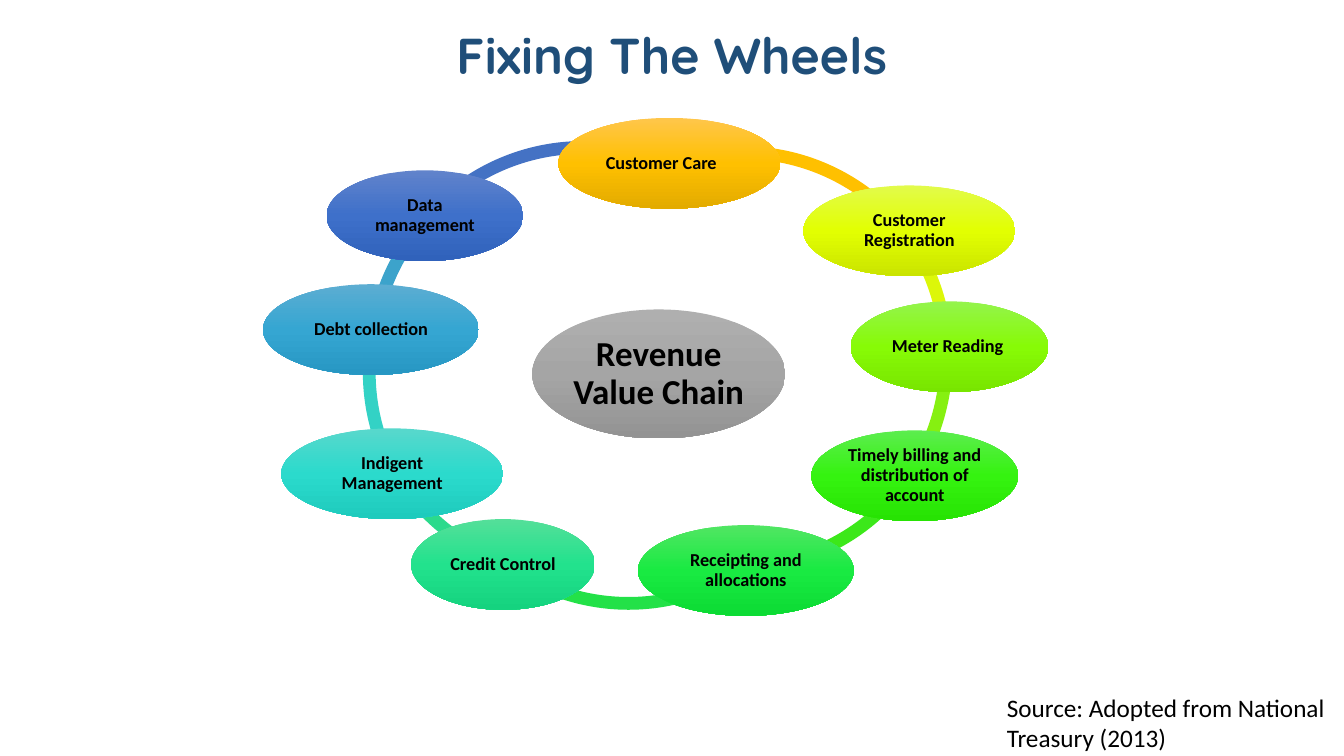
from copy import deepcopy
from dataclasses import dataclass

from pptx import Presentation
from pptx.dml.color import RGBColor
from pptx.enum.shapes import MSO_SHAPE
from pptx.enum.text import MSO_ANCHOR, PP_ALIGN
from pptx.oxml.ns import qn
from pptx.util import Inches, Pt

ELLIPSE = MSO_SHAPE.OVAL
BLOCK_ARC = MSO_SHAPE.BLOCK_ARC
CENTER = PP_ALIGN.CENTER
LEFT = PP_ALIGN.LEFT
MIDDLE = MSO_ANCHOR.MIDDLE
TOP = MSO_ANCHOR.TOP

COLUMNS, ROWS = 160, 90
ARC_SIZE = 50.76
ARC_THICKNESS = 0.03
STEP_HEIGHT = 10.8
DOWNWARD = 270

deck = Presentation()
deck.slide_width = Inches(13.33)
deck.slide_height = Inches(7.5)
page = deck.slides.add_slide(deck.slide_layouts[6])


@dataclass
class Arc:
    column: float
    row: float
    start: float
    end: float
    color: str


@dataclass
class Bubble:
    text: str
    column: float
    row: float
    width: float
    colors: tuple[str, str, str]
    height: float = STEP_HEIGHT
    size: int = 13
    inset: float = 0.02
    right_inset: float = 0.02


ARCS = [
    Arc(44.04, 16.8, 132.67, 176.61, "4472C4"),
    Arc(43.56, 17.4, 112.76, 133.73, "3CA3CB"),
    Arc(43.2, 18.96, 90.65, 114.93, "33D2C5"),
    Arc(42.96, 18.36, 65.86, 89.74, "2BDA8C"),
    Arc(49.44, 21.84, 33.55, 76.03, "23E148"),
    Arc(62.52, 17.52, 19.95, 52.86, "3CE81A"),
    Arc(62.64, 17.4, 213.96, 20.26, "86F011"),
    Arc(62.64, 16.92, 194.18, 214.51, "DCF709"),
    Arc(63, 17.4, 149.76, 193.36, "FFC000"),
]

BUBBLES = [
    Bubble("Revenue Value Chain", 63.36, 36.84, 30.12, ("AFAFAF", "A5A5A5", "939393"),
           height=15.36, size=25, inset=0.03, right_inset=0.03),
    Bubble("Customer Care", 66.48, 14.04, 26.4, ("FFC64B", "FFC000", "E3AB00"),
           right_inset=0.18),
    Bubble("Customer Registration", 95.64, 22.08, 25.2, ("E2FB4B", "E2FF01", "CAE400")),
    Bubble("Meter Reading", 101.28, 35.88, 23.52, ("94F44C", "87FB06", "78E500"),
           right_inset=0.06),
    Bubble("Timely billing and distribution of account", 96.6, 51.24, 24.6,
           ("5CED4E", "35F310", "27E303")),
    Bubble("Receipting and allocations", 75.96, 62.52, 25.68, ("51E663", "19EA42", "0CDB34")),
    Bubble("Credit Control", 48.96, 61.8, 21.84, ("54DF99", "22E28D", "15D37F")),
    Bubble("Indigent Management", 33.48, 51, 26.4, ("58D8CC", "2BDACC", "1ECBBD")),
    Bubble("Debt collection", 31.32, 33.84, 25.68, ("5CADD2", "35A6D2", "2797C3")),
    Bubble("Data management", 38.88, 20.28, 23.4, ("6183CB", "3E70CA", "3062BB")),
]


def rgb(color: str) -> RGBColor:
    return RGBColor.from_string(color)


def area(column: float, row: float, width: float, height: float) -> tuple[int, int, int, int]:
    return (
        round(deck.slide_width * column / COLUMNS),
        round(deck.slide_height * row / ROWS),
        round(deck.slide_width * width / COLUMNS),
        round(deck.slide_height * height / ROWS),
    )


def write(box, text: str, *, size: int, font: str = "Calibri", color: str = "000000",
          bold: bool = False, align=CENTER, anchor=MIDDLE, spacing: float = 0.9) -> None:
    frame = box.text_frame
    frame.word_wrap = True
    frame.vertical_anchor = anchor
    para = frame.paragraphs[0]
    para.alignment = align
    para.line_spacing = spacing
    span = para.add_run()
    span.text = text
    span.font.name = font
    span.font.size = Pt(size)
    span.font.bold = bold
    span.font.color.rgb = rgb(color)


def add_plain_shape(kind, column: float, row: float, width: float, height: float):
    shape = page.shapes.add_shape(kind, *area(column, row, width, height))
    shape.shadow.inherit = False
    shape.line.fill.background()
    return shape


def draw_arc(arc: Arc) -> None:
    shape = add_plain_shape(BLOCK_ARC, arc.column, arc.row, ARC_SIZE, ARC_SIZE)
    shape.adjustments[0] = arc.start
    shape.adjustments[1] = arc.end
    shape.adjustments[2] = ARC_THICKNESS
    shape.fill.solid()
    shape.fill.fore_color.rgb = rgb(arc.color)


def fill_gradient(shape, colors: tuple[str, str, str]) -> None:
    shape.fill.gradient()
    shape.fill.gradient_angle = DOWNWARD
    first_stop = shape._element.spPr.find(".//" + qn("a:gs"))
    first_stop.addnext(deepcopy(first_stop))
    for index, (stop, color) in enumerate(zip(shape.fill.gradient_stops, colors)):
        stop.position = index / 2
        stop.color.rgb = rgb(color)


def draw_bubble(bubble: Bubble) -> None:
    shape = add_plain_shape(ELLIPSE, bubble.column, bubble.row, bubble.width, bubble.height)
    fill_gradient(shape, bubble.colors)
    frame = shape.text_frame
    frame.margin_left = frame.margin_top = frame.margin_bottom = Inches(bubble.inset)
    frame.margin_right = Inches(bubble.right_inset)
    write(shape, bubble.text, size=bubble.size, bold=True)


def main() -> None:
    title = page.shapes.add_textbox(*area(3.12, 2.28, 153.72, 9.24))
    write(title, "Fixing The Wheels", size=36, font="Quicksand", color="1F4E79", bold=True)
    for arc in ARCS:
        draw_arc(arc)
    for bubble in BUBBLES:
        draw_bubble(bubble)
    source = page.shapes.add_textbox(*area(118.68, 81.84, 41.28, 8.52))
    write(source, "Source: Adopted from National Treasury (2013)", size=18,
          align=LEFT, anchor=TOP, spacing=1.0)
    deck.save("out.pptx")


if __name__ == "__main__":
    main()
